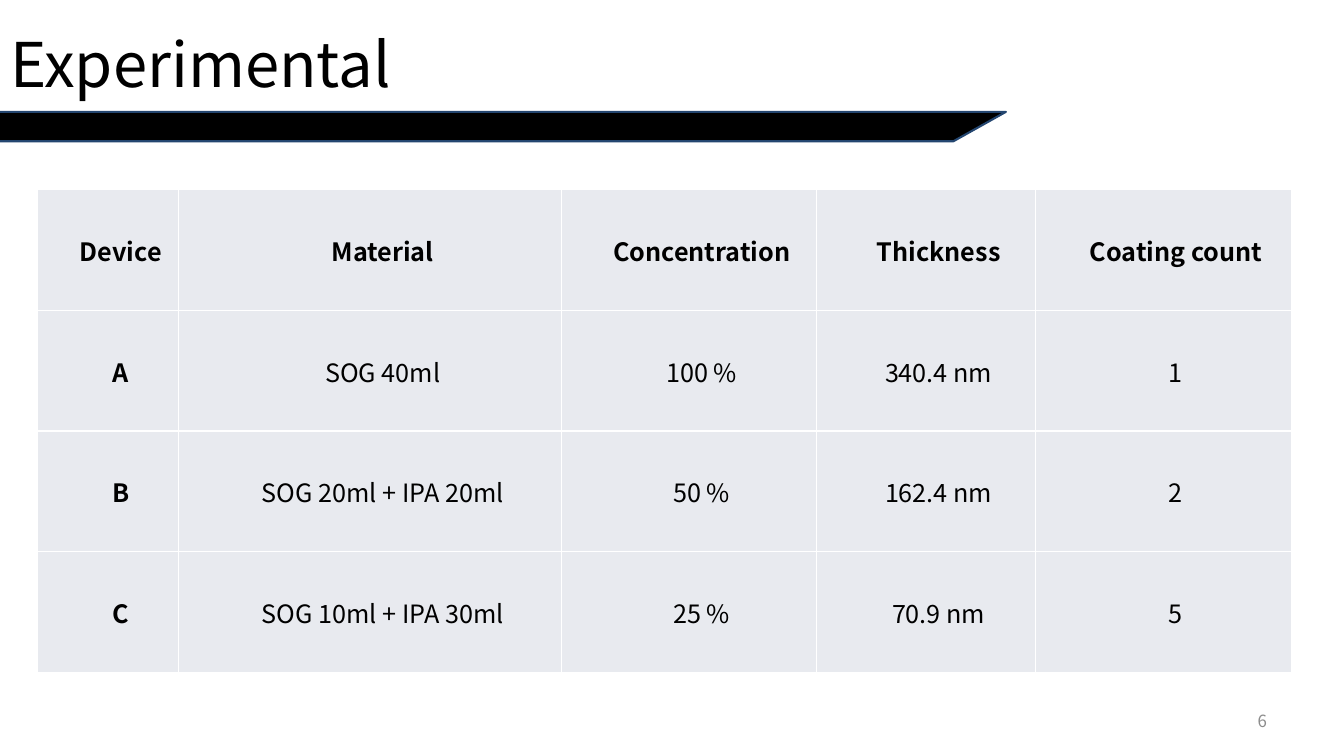
from lxml import etree
from pptx import Presentation
from pptx.dml.color import RGBColor
from pptx.enum.shapes import MSO_SHAPE
from pptx.enum.text import MSO_ANCHOR, PP_ALIGN
from pptx.oxml.ns import qn
from pptx.util import Cm, Pt

TITLE = "Experimental"
PAGE_NUMBER = "6"
ROWS = [
    ("Device", "Material", "Concentration", "Thickness", "Coating count"),
    ("A", "SOG 40ml", "100 %", "340.4 nm", "1"),
    ("B", "SOG 20ml + IPA 20ml", "50 %", "162.4 nm", "2"),
    ("C", "SOG 10ml + IPA 30ml", "25 %", "70.9 nm", "5"),
]
COLUMN_WIDTHS = [Cm(3.55), Cm(9.65), Cm(6.43), Cm(5.51), Cm(6.45)]
ROW_HEIGHT = Cm(3.04)
TITLE_ONLY = 5

FONT = "Noto Sans CJK KR"
BLACK = RGBColor(0x00, 0x00, 0x00)
WHITE = RGBColor(0xFF, 0xFF, 0xFF)
CELL_FILL = RGBColor(0xE8, 0xEA, 0xEF)
BAR_LINE = RGBColor(0x24, 0x46, 0x70)
PAGE_GRAY = RGBColor(0x8C, 0x8C, 0x8C)

MIDDLE = MSO_ANCHOR.MIDDLE
LEFT, CENTER, RIGHT = PP_ALIGN.LEFT, PP_ALIGN.CENTER, PP_ALIGN.RIGHT
PARALLELOGRAM = MSO_SHAPE.PARALLELOGRAM


def write(text_frame, text, size, color, alignment, bold=False):
    text_frame.text = text
    text_frame.word_wrap = True
    text_frame.vertical_anchor = MIDDLE
    paragraph = text_frame.paragraphs[0]
    paragraph.alignment = alignment
    font = paragraph.font
    font.name, font.size, font.bold = FONT, Pt(size), bold
    font.color.rgb = color
    return paragraph


def add_borders(cell):
    properties = cell._tc.get_or_add_tcPr()
    for side in ("a:lnL", "a:lnR", "a:lnT", "a:lnB"):
        line = etree.SubElement(properties, qn(side), w=str(Pt(1)))
        fill = etree.SubElement(line, qn("a:solidFill"))
        etree.SubElement(fill, qn("a:srgbClr"), val=str(WHITE))


def add_device_table(slide):
    frame = slide.shapes.add_table(
        len(ROWS), len(COLUMN_WIDTHS), Cm(0.95), Cm(4.78),
        sum(COLUMN_WIDTHS), ROW_HEIGHT * len(ROWS))
    table = frame.table
    for column, width in zip(table.columns, COLUMN_WIDTHS):
        column.width = width
    for row_index, texts in enumerate(ROWS):
        table.rows[row_index].height = ROW_HEIGHT
        for column_index, text in enumerate(texts):
            cell = table.cell(row_index, column_index)
            add_borders(cell)
            cell.fill.solid()
            cell.fill.fore_color.rgb = CELL_FILL
            cell.margin_left = cell.margin_right = Cm(0.18)
            cell.margin_top, cell.margin_bottom = Cm(0.03), 0
            cell.vertical_anchor = MIDDLE
            is_heading = row_index == 0 or column_index == 0
            paragraph = write(cell.text_frame, text, 18, BLACK, CENTER, is_heading)
            paragraph_properties = paragraph._p.get_or_add_pPr()
            paragraph_properties.set("marL", "0")
            paragraph_properties.set("indent", str(Cm(0.64)))


def add_title(slide):
    title = slide.shapes.title
    title.left, title.top, title.width, title.height = 0, 0, Cm(30.48), Cm(3.18)
    write(title.text_frame, TITLE, 44, BLACK, LEFT)


def add_title_bar(slide):
    bar = slide.shapes.add_shape(
        PARALLELOGRAM, Cm(-2.06), Cm(2.82), Cm(27.41), Cm(0.74))
    bar.adjustments[0] = 1.785
    bar.shadow.inherit = False
    bar.fill.solid()
    bar.fill.fore_color.rgb = BLACK
    bar.line.color.rgb = BAR_LINE
    bar.line.width = Pt(1.5)


def add_page_number(slide):
    box = slide.shapes.add_textbox(Cm(24.28), Cm(17.65), Cm(7.9), Cm(1.02))
    write(box.text_frame, PAGE_NUMBER, 12, PAGE_GRAY, RIGHT)


def main():
    presentation = Presentation()
    presentation.slide_width, presentation.slide_height = Cm(33.87), Cm(19.05)
    slide = presentation.slides.add_slide(presentation.slide_layouts[TITLE_ONLY])
    add_device_table(slide)
    add_title(slide)
    add_title_bar(slide)
    add_page_number(slide)
    presentation.save("out.pptx")


if __name__ == "__main__":
    main()
